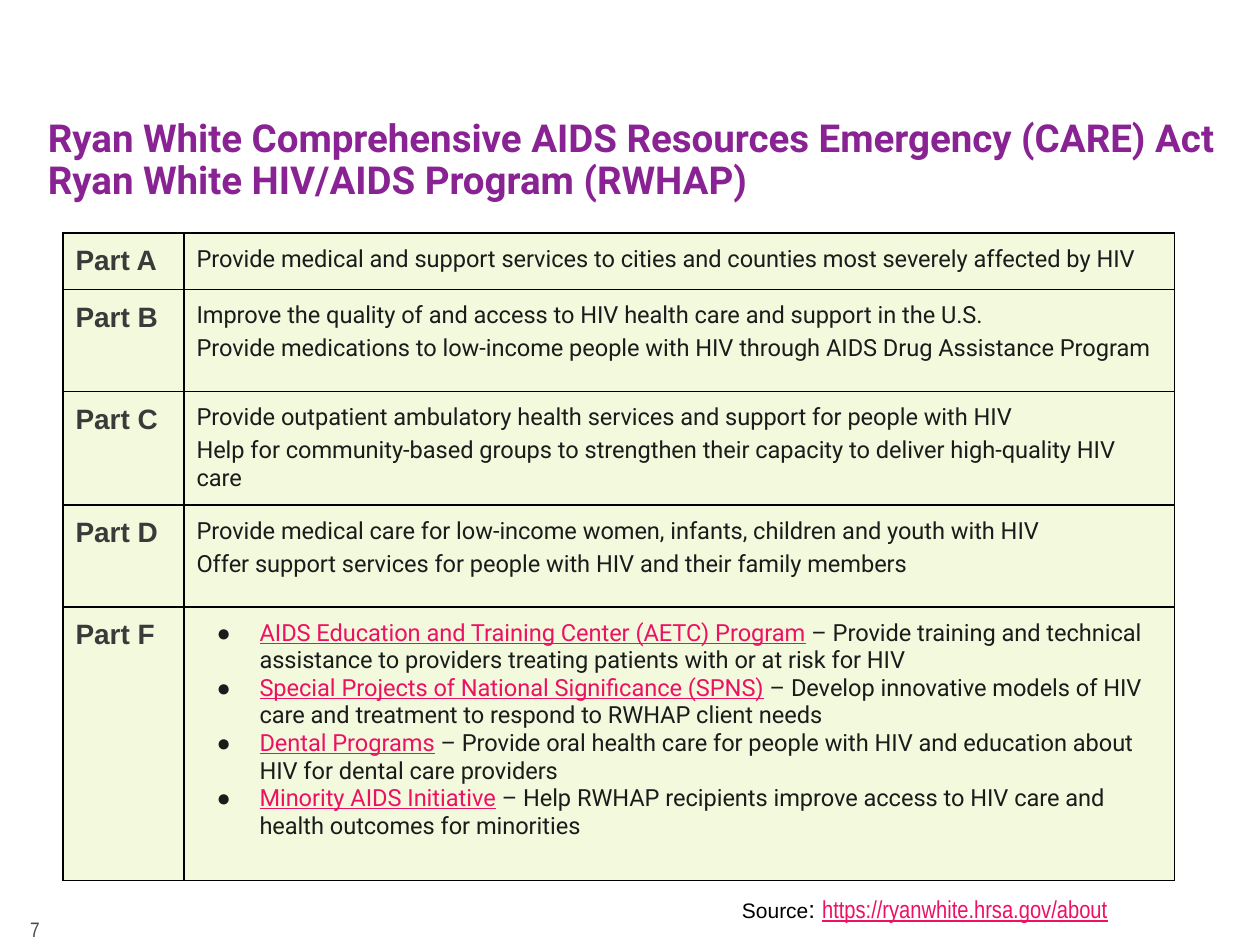
from lxml import etree
from pptx import Presentation
from pptx import util as u
from pptx.dml.color import RGBColor
from pptx.enum import text
from pptx.oxml import ns

COLORS = {
    "title": "892293", "part": "3A3A3A", "body": "1B1B1B", "link": "ED1163",
    "cell": "F3F9DD", "border": "000000", "number": "4D4D4D",
}
TITLE = [
    "Ryan White Comprehensive AIDS Resources Emergency (CARE) Act",
    "Ryan White HIV/AIDS Program (RWHAP)",
]
# Part, row height in inches, paragraphs
PARTS = [
    ("Part A", 0.44, [
        "Provide medical and support services to cities and counties most severely affected by HIV"]),
    ("Part B", 0.81, [
        "Improve the quality of and access to HIV health care and support in the U.S.",
        "Provide medications to low-income people with HIV through AIDS Drug Assistance Program"]),
    ("Part C", 0.9, [
        "Provide outpatient ambulatory health services and support for people with HIV",
        "Help for community-based groups to strengthen their capacity to deliver high-quality HIV care"]),
    ("Part D", 0.81, [
        "Provide medical care for low-income women, infants, children and youth with HIV",
        "Offer support services for people with HIV and their family members"]),
    ("Part F", 2.17, [
        ("AIDS Education and Training Center (AETC) Program",
         " – Provide training and technical assistance to providers treating patients with or at risk for HIV"),
        ("Special Projects of National Significance (SPNS)",
         " – Develop innovative models of HIV care and treatment to respond to RWHAP client needs"),
        ("Dental Programs",
         " – Provide oral health care for people with HIV and education about HIV for dental care providers"),
        ("Minority AIDS Initiative",
         " – Help RWHAP recipients improve access to HIV care and health outcomes for minorities")]),
]


def rgb(name):
    return RGBColor.from_string(COLORS[name])


def write(paragraph, words, font="Roboto", size=13.5, color="body", bold=False, underline=False):
    run = paragraph.add_run()
    run.text = words
    run.font.name = font
    run.font.size = u.Pt(size)
    run.font.color.rgb = rgb(color)
    run.font.bold = bold
    run.font.underline = underline


def paragraphs(frame, count):
    return [frame.paragraphs[0]] + [frame.add_paragraph() for _ in range(count - 1)]


def add_bullet(paragraph):
    props = paragraph._p.get_or_add_pPr()
    props.set("marL", str(u.Inches(0.5)))
    props.set("indent", str(u.Inches(-0.34)))
    color = etree.SubElement(props, ns.qn("a:buClr"))
    etree.SubElement(color, ns.qn("a:srgbClr"), val=COLORS["body"])
    etree.SubElement(props, ns.qn("a:buFont"), typeface="Arial")
    etree.SubElement(props, ns.qn("a:buChar"), char="●")


def style_cell(cell):
    cell.margin_left = cell.margin_right = u.Inches(0.1)
    cell.margin_top = cell.margin_bottom = u.Inches(0.1)
    props = cell._tc.get_or_add_tcPr()
    for side in ("lnL", "lnR", "lnT", "lnB"):
        line = etree.SubElement(props, ns.qn(f"a:{side}"), w=str(u.Pt(1)))
        fill = etree.SubElement(line, ns.qn("a:solidFill"))
        etree.SubElement(fill, ns.qn("a:srgbClr"), val=COLORS["border"])
    cell.fill.solid()
    cell.fill.fore_color.rgb = rgb("cell")


def place_title(slide, left, top, width, height):
    title = slide.shapes.title
    title.left, title.top, title.width, title.height = left, top, width, height
    frame = title.text_frame
    frame.word_wrap = True
    frame.auto_size = text.MSO_AUTO_SIZE.NONE
    frame.vertical_anchor = text.MSO_ANCHOR.TOP
    for paragraph, words in zip(paragraphs(frame, len(TITLE)), TITLE):
        paragraph.alignment = text.PP_ALIGN.LEFT
        paragraph.line_spacing = 0.9
        paragraph.space_before = u.Pt(0)
        write(paragraph, words, size=22, color="title", bold=True)


def place_parts(slide, left, top, width, height):
    table = slide.shapes.add_table(len(PARTS), 2, left, top, width, height).table
    table.first_row = table.horz_banding = False
    table.columns[0].width = u.Inches(0.96)
    table.columns[1].width = width - u.Inches(0.96)
    for row, (part, row_height, items) in enumerate(PARTS):
        table.rows[row].height = u.Inches(row_height)
        name_cell, detail_cell = table.cell(row, 0), table.cell(row, 1)
        style_cell(name_cell)
        style_cell(detail_cell)
        write(name_cell.text_frame.paragraphs[0], part, font="Arial", size=16, color="part", bold=True)
        for index, paragraph in enumerate(paragraphs(detail_cell.text_frame, len(items))):
            item = items[index]
            if isinstance(item, tuple):
                program, purpose = item
                add_bullet(paragraph)
                write(paragraph, program, color="link", underline=True)
                write(paragraph, purpose)
            else:
                if index:
                    paragraph.space_before = u.Pt(3)
                write(paragraph, item)


def add_line(slide, left, top, width, height):
    frame = slide.shapes.add_textbox(left, top, width, height).text_frame
    frame.word_wrap = True
    return frame


def place_source(slide, left, top, width, height):
    source = add_line(slide, left, top, width, height).paragraphs[0]
    write(source, "Source", font="Arial", size=12, color="border")
    write(source, ": ", font="Arial", size=14, color="border")
    write(source, "https://ryanwhite.hrsa.gov/about", font="Arial Narrow", size=14,
          color="link", underline=True)


def place_number(slide, left, top, width, height):
    frame = add_line(slide, left, top, width, height)
    frame.vertical_anchor = text.MSO_ANCHOR.MIDDLE
    write(frame.paragraphs[0], "7", font="Arial Narrow", size=12, color="number")


def main():
    deck = Presentation()
    deck.slide_width, deck.slide_height = u.Inches(10), u.Inches(7.5)
    slide = deck.slides.add_slide(deck.slide_layouts[5])

    # Heading
    place_title(slide, u.Inches(0.28), u.Inches(0.9), u.Inches(10.64), u.Inches(0.75))
    # Program parts
    place_parts(slide, u.Inches(0.5), u.Inches(1.85), u.Inches(8.82), u.Inches(5.13))
    # Footer
    place_number(slide, u.Inches(0.14), u.Inches(7.25), u.Inches(2.25), u.Inches(0.25))
    place_source(slide, u.Inches(5.79), u.Inches(7.05), u.Inches(3.71), u.Inches(0.57))

    deck.save("out.pptx")


if __name__ == "__main__":
    main()
